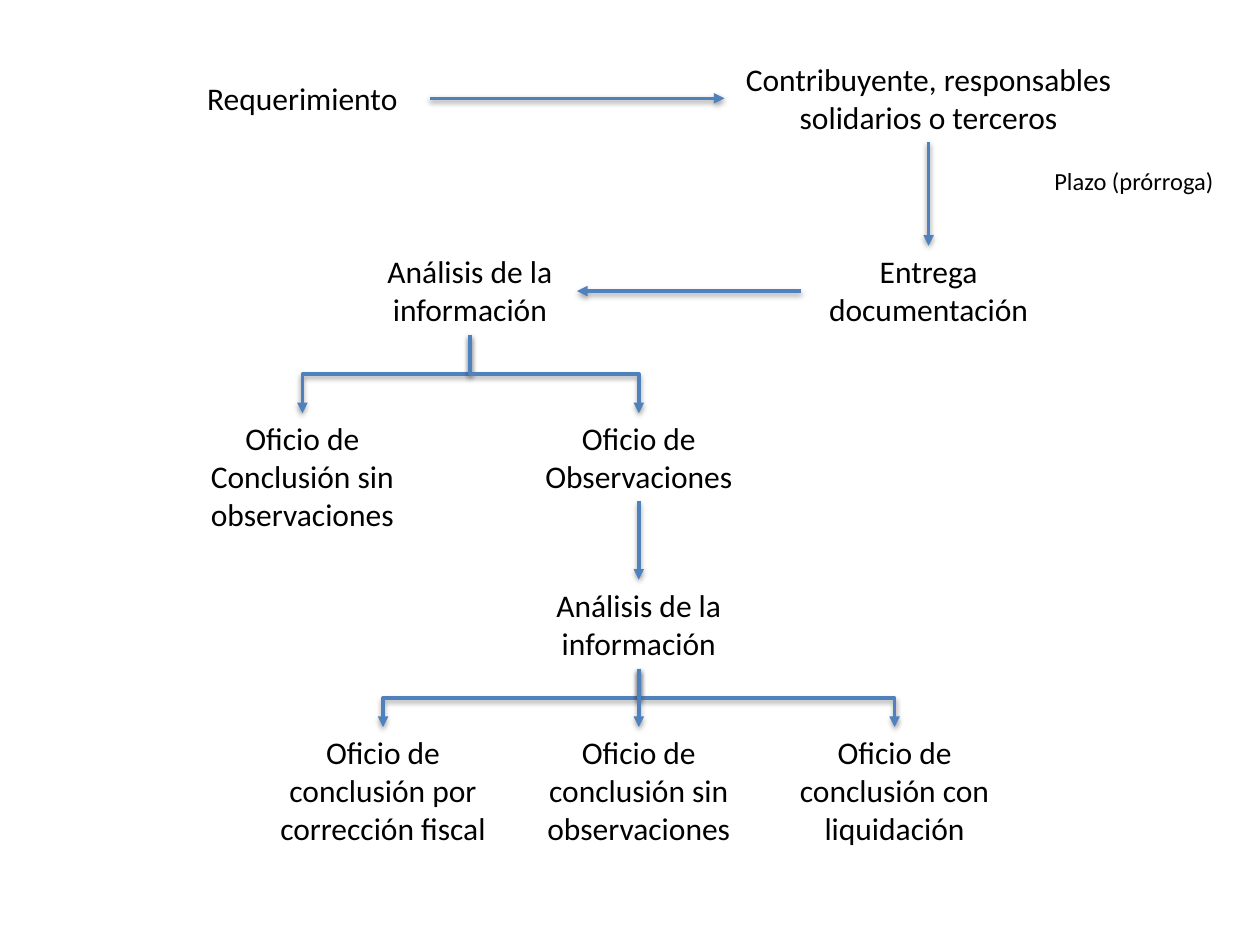
import pptx
import pptx.util
import pptx.dml.color
import pptx.enum.shapes
import pptx.enum.text
import pptx.oxml
import pptx.oxml.ns

Inches = pptx.util.Inches
RGB = pptx.dml.color.RGBColor
BLACK = RGB(0x00, 0x00, 0x00)
BLUE = RGB(0x4F, 0x81, 0xBD)
NS = pptx.oxml.ns.nsdecls("a")
TAIL = f'<a:tailEnd {NS} type="triangle"/>'
SHADE = (
    f'<a:effectLst {NS}><a:outerShdw blurRad="40000" dist="20000" dir="5400000" rotWithShape="0">'
    '<a:srgbClr val="000000"><a:alpha val="38000"/></a:srgbClr></a:outerShdw></a:effectLst>'
)
WIDE = 2.03
HIGH = {1: 0.4, 2: 0.71, 3: 1.01}


class Chart:
    """Draw the labels and arrows of a flow chart on one slide."""

    def __init__(self, slide):
        self.slide = slide
        self.font = {"name": "Calibri", "size": pptx.util.Pt(18)}
        self.frame = {
            "word_wrap": True,
            "auto_size": pptx.enum.text.MSO_AUTO_SIZE.SHAPE_TO_FIT_TEXT,
        }
        self.stroke = {"width": pptx.util.Pt(2)}

    def apply(self, item, style):
        """Set each value of a style on an item."""
        for name, value in style.items():
            setattr(item, name, value)

    def label(self, text, mid, top, rows, wide=WIDE, **font):
        """Add a centred label around a middle line."""
        box = self.slide.shapes.add_textbox(
            Inches(mid - wide / 2), Inches(top), Inches(wide), Inches(HIGH[rows])
        )
        self.apply(box.text_frame, self.frame)
        para = box.text_frame.paragraphs[0]
        para.alignment = pptx.enum.text.PP_ALIGN.CENTER
        run = para.add_run()
        run.text = text
        self.apply(run.font, {**self.font, **font})
        run.font.color.rgb = BLACK

    def arrow(self, start, end, kind=pptx.enum.shapes.MSO_CONNECTOR.STRAIGHT):
        """Add an arrow between two points."""
        link = self.slide.shapes.add_connector(kind, *map(Inches, (*start, *end)))
        self.apply(link.line, self.stroke)
        link.line.color.rgb = BLUE
        props = link.element.spPr
        props.find(pptx.oxml.ns.qn("a:ln")).append(pptx.oxml.parse_xml(TAIL))
        props.append(pptx.oxml.parse_xml(SHADE))
        return link

    def branch(self, start, end):
        """Add a bent arrow that leaves downwards and turns sideways."""
        midx, midy = (start[0] + end[0]) / 2, (start[1] + end[1]) / 2
        left = end[0] < start[0]
        half = (end[1] - start[1]) / 2 * (1 if left else -1)
        side = abs(end[0] - start[0]) / 2
        link = self.arrow(
            (midx - half, midy - side),
            (midx + half, midy + side),
            pptx.enum.shapes.MSO_CONNECTOR.ELBOW,
        )
        turn = 90 if left else 270
        link.element.spPr.find(pptx.oxml.ns.qn("a:xfrm")).set("rot", str(turn * 60000))


def main():
    """Build the slide and save it."""
    deck = pptx.Presentation()
    deck.slide_width, deck.slide_height = Inches(10), Inches(7.5)
    chart = Chart(deck.slides.add_slide(deck.slide_layouts[6]))
    left, mid, right, check = 2.4, 5.07, 7.37, 3.73
    ends = [mid - WIDE, mid, mid + WIDE]

    chart.label("Requerimiento", left, 0.58, 1)
    chart.label("Contribuyente, responsables solidarios o terceros", right, 0.43, 2, 3.26)
    chart.label("Entrega documentación", right, 1.95, 2)
    chart.label("Análisis de la información", check, 1.95, 2)
    chart.label("Plazo (prórroga)", 9, 1.27, 1, size=pptx.util.Pt(14))
    chart.label("Oficio de Observaciones", mid, 3.28, 2)
    chart.label("Oficio de Conclusión sin observaciones", left, 3.28, 3)
    chart.label("Análisis de la información", mid, 4.6, 2)
    results = ["por corrección fiscal", "sin observaciones", "con liquidación"]
    for x, result in zip(ends, results):
        chart.label(f"Oficio de conclusión {result}", x, 5.77, 3)

    chart.arrow((3.41, 0.78), (5.75, 0.78))
    chart.arrow((right, 1.13), (right, 1.95))
    chart.arrow((6.36, 2.31), (4.58, 2.31))
    for x in (left, mid):
        chart.branch((check, 2.66), (x, 3.28))
    chart.arrow((mid, 3.98), (mid, 4.6))
    for x in (ends[0], ends[2]):
        chart.branch((mid, 5.31), (x, 5.77))
    chart.arrow((mid, 5.31), (mid, 5.77))
    deck.save("out.pptx")


if __name__ == "__main__":
    main()
